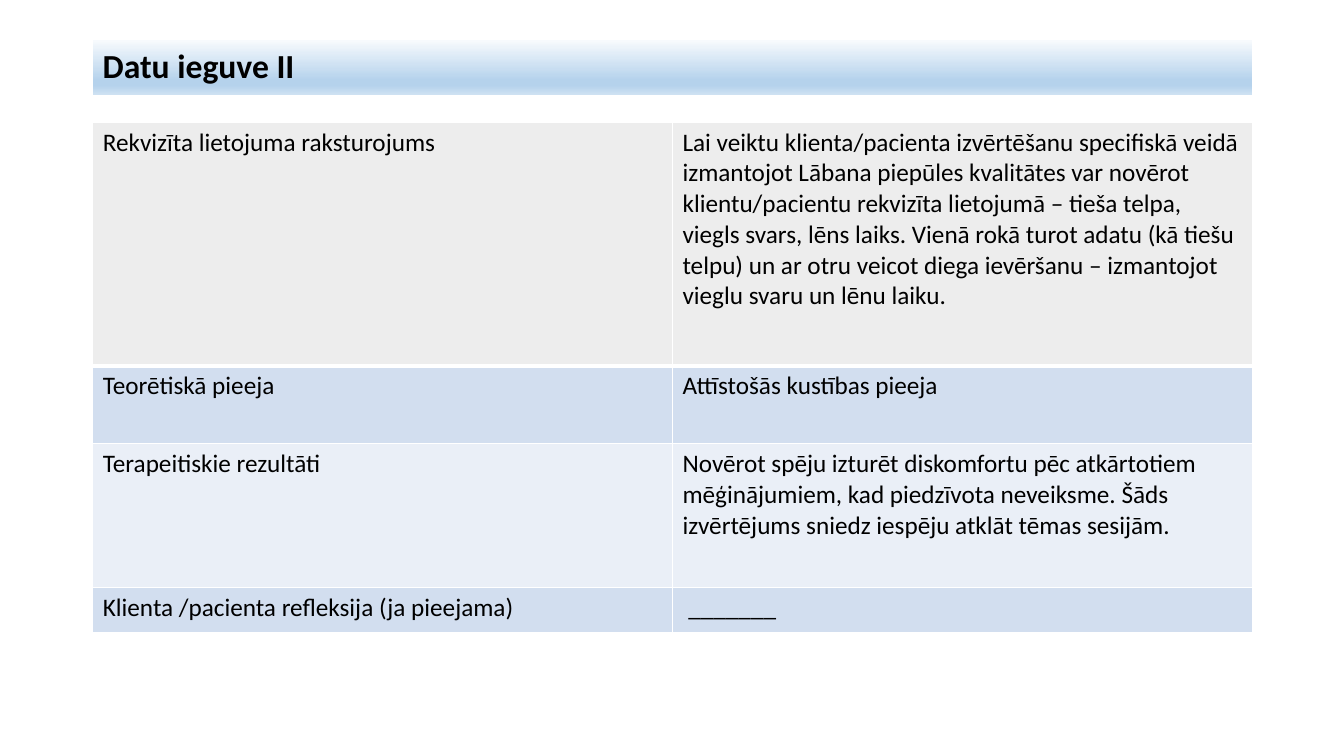
from lxml import etree
from pptx import Presentation
from pptx.dml.color import RGBColor
from pptx.enum.shapes import MSO_SHAPE
from pptx.enum.text import MSO_ANCHOR, PP_ALIGN
from pptx.oxml.ns import qn
from pptx.util import Inches, Pt

RECTANGLE = MSO_SHAPE.RECTANGLE
MIDDLE = MSO_ANCHOR.MIDDLE
LEFT = PP_ALIGN.LEFT

FONT = "Calibri"
BLACK, WHITE = "000000", "FFFFFF"
GREY, BLUE, PALE_BLUE = "EDEDED", "D2DEEF", "EAEFF7"
TITLE_STOPS = [(0, "F7FAFD"), (74, "B5D2EC"), (83, "B5D2EC"), (100, "CEE1F2")]

MARGIN, CONTENT_WIDTH = 0.92, 11.5
TITLE_BOX = (MARGIN, 0.4, CONTENT_WIDTH, 0.54)
TABLE_BOX = (MARGIN, 1.21, CONTENT_WIDTH, 5.06)

ROWS = [
    (2.42, GREY, "Rekvizīta lietojuma raksturojums",
     "Lai veiktu klienta/pacienta izvērtēšanu specifiskā veidā izmantojot "
     "Lābana piepūles kvalitātes var novērot klientu/pacientu rekvizīta "
     "lietojumā – tieša telpa, viegls svars, lēns laiks. Vienā rokā turot "
     "adatu (kā tiešu telpu) un ar otru veicot diega ievēršanu – izmantojot "
     "vieglu svaru un lēnu laiku."),
    (0.77, BLUE, "Teorētiskā pieeja", "Attīstošās kustības pieeja"),
    (1.43, PALE_BLUE, "Terapeitiskie rezultāti",
     "Novērot spēju izturēt diskomfortu pēc atkārtotiem mēģinājumiem, kad "
     "piedzīvota neveiksme. Šāds izvērtējums sniedz iespēju atklāt tēmas "
     "sesijām."),
    (0.45, BLUE, "Klienta /pacienta refleksija (ja pieejama)", " _______"),
]


def colour(value):
    return RGBColor.from_string(value)


def add_colour(parent, value):
    etree.SubElement(parent, qn("a:srgbClr"), val=value)


def write(frame, text, size, bold=False):
    frame.word_wrap = True
    para = frame.paragraphs[0]
    para.text = text
    para.alignment = LEFT
    para.font.name = FONT
    para.font.size = Pt(size)
    para.font.bold = bold
    para.font.color.rgb = colour(BLACK)
    return para


def fill_gradient(shape, stops):
    shape.fill.gradient()
    shape.fill.gradient_angle = 270
    stop_list = next(shape.element.iter(qn("a:gsLst")))
    for stop in list(stop_list):
        stop_list.remove(stop)
    for percent, value in stops:
        stop = etree.SubElement(stop_list, qn("a:gs"), pos=str(percent * 1000))
        add_colour(stop, value)


def add_borders(cell, widths):
    properties = cell._tc.get_or_add_tcPr()
    for side, width in widths.items():
        line = etree.SubElement(properties, qn(f"a:ln{side}"), w=str(Pt(width)))
        add_colour(etree.SubElement(line, qn("a:solidFill")), WHITE)


def add_title(page, box, text):
    banner = page.shapes.add_shape(RECTANGLE, *map(Inches, box))
    banner.shadow.inherit = False
    banner.line.fill.background()
    fill_gradient(banner, TITLE_STOPS)
    banner.text_frame.vertical_anchor = MIDDLE
    write(banner.text_frame, text, 24, bold=True).line_spacing = 0.9


def add_summary_table(page, box, rows):
    table = page.shapes.add_table(len(rows), 2, *map(Inches, box)).table
    table.first_row = False
    table.horz_banding = False
    for column in table.columns:
        column.width = Inches(box[2] / 2)
    for index, (height, shade, *texts) in enumerate(rows):
        table.rows[index].height = Inches(height)
        widths = {"L": 1, "R": 1, "T": 3 if index == 1 else 1,
                  "B": 3 if index == 0 else 1}
        for cell, text in zip(table.rows[index].cells, texts):
            add_borders(cell, widths)
            cell.fill.solid()
            cell.fill.fore_color.rgb = colour(shade)
            write(cell.text_frame, text, 18)


def main():
    deck = Presentation()
    deck.slide_width, deck.slide_height = Inches(13.33), Inches(7.5)
    page = deck.slides.add_slide(deck.slide_layouts[6])
    add_title(page, TITLE_BOX, "Datu ieguve II")
    add_summary_table(page, TABLE_BOX, ROWS)
    deck.save("out.pptx")


if __name__ == "__main__":
    main()
